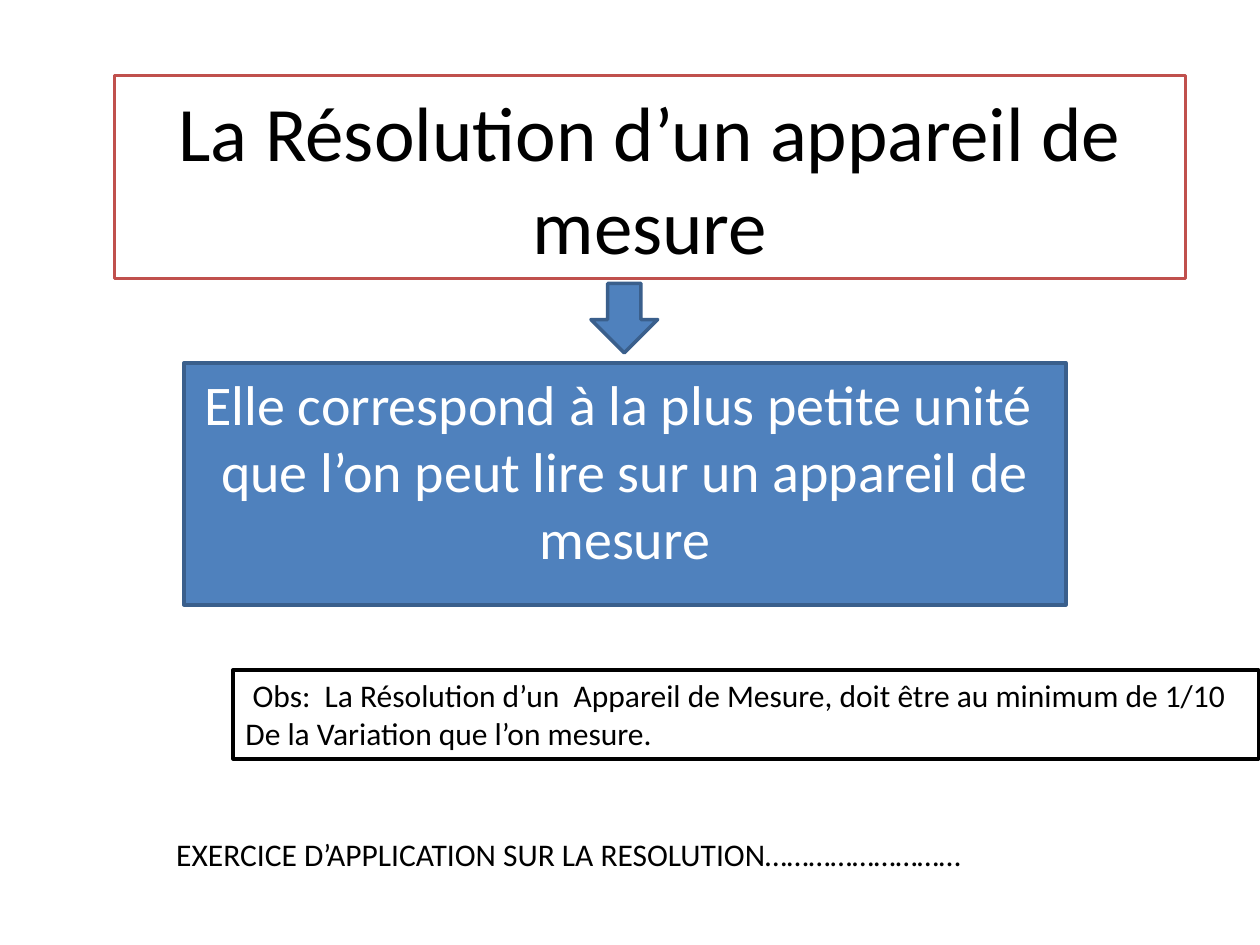
from pptx import Presentation
from pptx import util as u
from pptx.dml.color import RGBColor
from pptx.enum import shapes, text

WIDTH, HEIGHT = u.Inches(10), u.Inches(7.5)
FONT = "Calibri"
BLACK = RGBColor(0x00, 0x00, 0x00)
WHITE = RGBColor(0xFF, 0xFF, 0xFF)
RED = RGBColor(0xC0, 0x50, 0x4D)
BLUE = RGBColor(0x4F, 0x81, 0xBD)
DARK_BLUE = RGBColor(0x3A, 0x5F, 0x8C)


def place(left, top, width, height):
    """Turn percentages of the slide into lengths."""
    return (int(WIDTH * left / 100), int(HEIGHT * top / 100),
            int(WIDTH * width / 100), int(HEIGHT * height / 100))


def add_block(slide, kind, area, fill, line):
    shape = slide.shapes.add_shape(kind, *place(*area))
    shape.shadow.inherit = False
    shape.fill.solid()
    shape.fill.fore_color.rgb = fill
    shape.line.color.rgb = line
    shape.line.width = u.Pt(2)
    return shape


def write(shape, words, size, color, align, anchor, space_before=0):
    frame = shape.text_frame
    frame.text = words
    frame.word_wrap = True
    frame.vertical_anchor = anchor
    for paragraph in frame.paragraphs:
        paragraph.alignment = align
        paragraph.space_before = u.Pt(space_before)
        for run in paragraph.runs:
            run.font.name = FONT
            run.font.size = u.Pt(size)
            run.font.color.rgb = color


def main():
    presentation = Presentation()
    presentation.slide_width, presentation.slide_height = WIDTH, HEIGHT
    slide = presentation.slides.add_slide(presentation.slide_layouts[6])
    rectangle = shapes.MSO_SHAPE.RECTANGLE
    align, anchor = text.PP_ALIGN, text.MSO_ANCHOR

    # Title
    title = add_block(slide, rectangle, (9.1, 8, 85, 21.5), WHITE, RED)
    write(title, "La Résolution d’un appareil de mesure",
          44, BLACK, align.CENTER, anchor.MIDDLE)

    # Definition, with the arrow leading to it
    definition = add_block(slide, rectangle, (14.6, 38.4, 70, 25.6), BLUE, DARK_BLUE)
    write(definition, "Elle correspond à la plus petite unité  que l’on peut lire "
          "sur un appareil de mesure",
          32, WHITE, align.CENTER, anchor.TOP, space_before=6.4)
    add_block(slide, shapes.MSO_SHAPE.DOWN_ARROW, (46.9, 30, 5.3, 7.35), BLUE, DARK_BLUE)

    # Exercise line
    exercise = slide.shapes.add_textbox(*place(13, 83.6, 64.8, 9.4))
    write(exercise, "EXERCICE D’APPLICATION SUR LA RESOLUTION………………………",
          18, BLACK, align.LEFT, anchor.BOTTOM)

    # Observation
    observation = add_block(slide, rectangle, (18.5, 70.9, 81.4, 9.4), WHITE, BLACK)
    write(observation, " Obs:  La Résolution d’un  Appareil de Mesure, doit être "
          "au minimum de 1/10\nDe la Variation que l’on mesure.",
          18, BLACK, align.LEFT, anchor.TOP)

    presentation.save("out.pptx")


if __name__ == "__main__":
    main()
